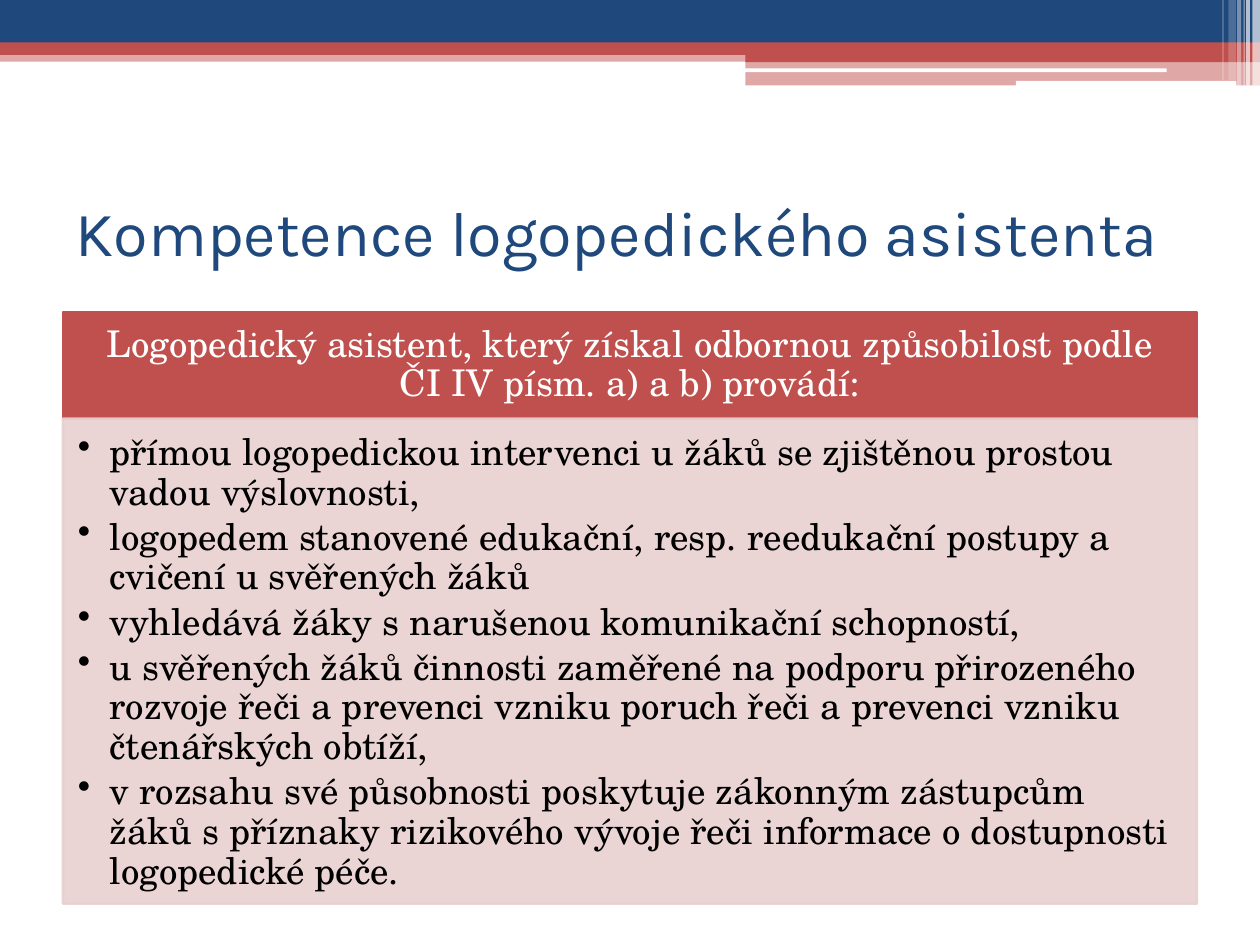
from lxml import etree
from pptx import Presentation
from pptx.dml.color import RGBColor
from pptx.enum.shapes import MSO_SHAPE
from pptx.enum.text import MSO_ANCHOR, MSO_AUTO_SIZE, PP_ALIGN
from pptx.oxml.ns import qn
from pptx.util import Pt

RECTANGLE = MSO_SHAPE.RECTANGLE
ROUNDED = MSO_SHAPE.ROUNDED_RECTANGLE
MIDDLE, TOP = MSO_ANCHOR.MIDDLE, MSO_ANCHOR.TOP
LEFT, CENTER = PP_ALIGN.LEFT, PP_ALIGN.CENTER

COLORS = {
    "blue": "1F497D",
    "red": "C0504D",
    "pink": "E8D0D0",
    "white": "FFFFFF",
    "black": "000000",
}
TITLE_FONT, BODY_FONT = "Karla", "TeX Gyre Schola"

presentation = Presentation()
presentation.slide_width, presentation.slide_height = Pt(720), Pt(540)
slide = presentation.slides.add_slide(presentation.slide_layouts[5])


def add_block(kind, box, color, opacity=100, line_width=0):
    """Add a filled shape, with an outline of the same colour if asked."""
    shape = slide.shapes.add_shape(kind, *(Pt(length) for length in box))
    shape.shadow.inherit = False
    shape.fill.solid()
    shape.fill.fore_color.rgb = RGBColor.from_string(COLORS[color])
    if line_width:
        shape.line.width = Pt(line_width)
        shape.line.color.rgb = RGBColor.from_string(COLORS[color])
    else:
        shape.line.fill.background()
    if opacity < 100:
        for element in list(shape._element.spPr.iter(qn("a:srgbClr"))):
            etree.SubElement(element, qn("a:alpha")).set("val", str(opacity * 1000))
    return shape


def fill_text(shape, lines, color, alignment, space_after, margins, bullet=None):
    """Write the lines as paragraphs, with hanging bullets if asked."""
    frame = shape.text_frame
    frame.word_wrap = True
    (frame.margin_left, frame.margin_top,
     frame.margin_right, frame.margin_bottom) = (Pt(margin) for margin in margins)
    frame.text = "\n".join(lines)
    for paragraph in frame.paragraphs:
        paragraph.alignment = alignment
        paragraph.line_spacing = 0.9
        paragraph.space_after = Pt(space_after)
        if bullet:
            paragraph.level = 1
            properties = paragraph._p.get_or_add_pPr()
            properties.set("marL", str(Pt(18)))
            properties.set("indent", str(-Pt(18)))
            etree.SubElement(properties, qn("a:buChar")).set("char", bullet)
        for run in paragraph.runs:
            run.font.name = BODY_FONT
            run.font.size = Pt(21)
            run.font.color.rgb = RGBColor.from_string(COLORS[color])


# Header bands: kind, box, colour, opacity
bands = [
    (RECTANGLE, (0, 28.8, 720, 6.48), "red", 50),
    (RECTANGLE, (0, 0, 720, 24.48), "blue", 100),
    (RECTANGLE, (0, 24.2, 720, 7.2), "red", 100),
    (RECTANGLE, (426, 28.3, 294, 7.2), "red", 100),
    (RECTANGLE, (426, 34.6, 294, 14.2), "red", 50),
    (ROUNDED, (425.5, 39.1, 241.2, 2.2), "white", 100),
    (ROUNDED, (580.5, 46.2, 126, 2.9), "white", 100),
]
for band in bands:
    add_block(*band)

# Pale vertical stripes at the right end: left, width, height, opacity
stripes = [
    (715.7, 4.3, 49, 65),
    (712.1, 2.2, 49, 65),
    (710.6, 0.7, 49, 60),
    (707, 2.2, 49, 40),
    (702, 4.3, 46, 20),
    (698.5, 0.7, 46, 30),
]
for left, width, height, opacity in stripes:
    add_block(RECTANGLE, (left, 0, width, height), "white", opacity)

# Title
title = slide.shapes.title
title.left, title.top, title.width, title.height = Pt(36), Pt(90), Pt(648), Pt(84)
title.text_frame.text = "Kompetence logopedického asistenta"
title.text_frame.auto_size = MSO_AUTO_SIZE.NONE
title.text_frame.vertical_anchor = MIDDLE
title_paragraph = title.text_frame.paragraphs[0]
title_paragraph.alignment = LEFT
title_font = title_paragraph.runs[0].font
title_font.name, title_font.size = TITLE_FONT, Pt(36)
title_font.color.rgb = RGBColor.from_string(COLORS["blue"])

# Heading of the list
heading = add_block(RECTANGLE, (36, 178.3, 648, 60.9), "red", line_width=1.5)
heading.text_frame.vertical_anchor = MIDDLE
fill_text(
    heading,
    ["Logopedický asistent, který získal odbornou způsobilost podle "
     "ČI IV písm. a) a b) provádí:"],
    "white", CENTER, 7.35, (11.5, 6.5, 11.5, 6.5),
)

# List of competences
competences = [
    "přímou logopedickou intervenci u žáků se zjištěnou prostou vadou výslovnosti,",
    "logopedem stanovené edukační, resp. reedukační postupy a cvičení u svěřených žáků",
    "vyhledává žáky s narušenou komunikační schopností,",
    "u svěřených žáků činnosti zaměřené na podporu přirozeného rozvoje řeči "
    "a prevenci vzniku poruch řeči a prevenci vzniku čtenářských obtíží,",
    "v rozsahu své působnosti poskytuje zákonným zástupcům žáků s příznaky "
    "rizikového vývoje řeči informace o dostupnosti logopedické péče.",
]
body = add_block(RECTANGLE, (36, 239.2, 648, 277.2), "pink", 90, line_width=1.5)
body.text_frame.vertical_anchor = TOP
fill_text(body, competences, "black", LEFT, 3.15, (8.6, 8.6, 11.5, 13), bullet="•")

presentation.save("out.pptx")
